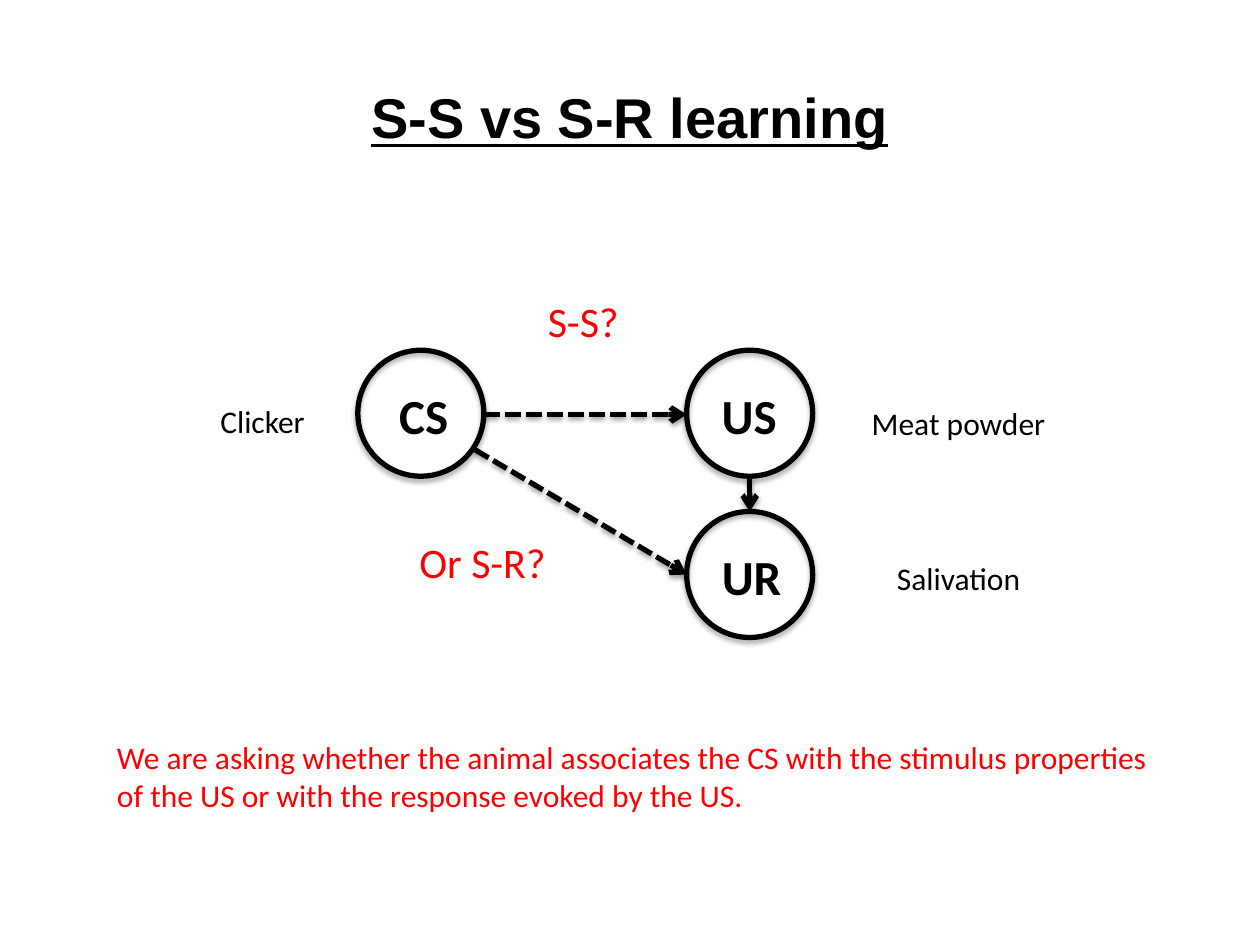
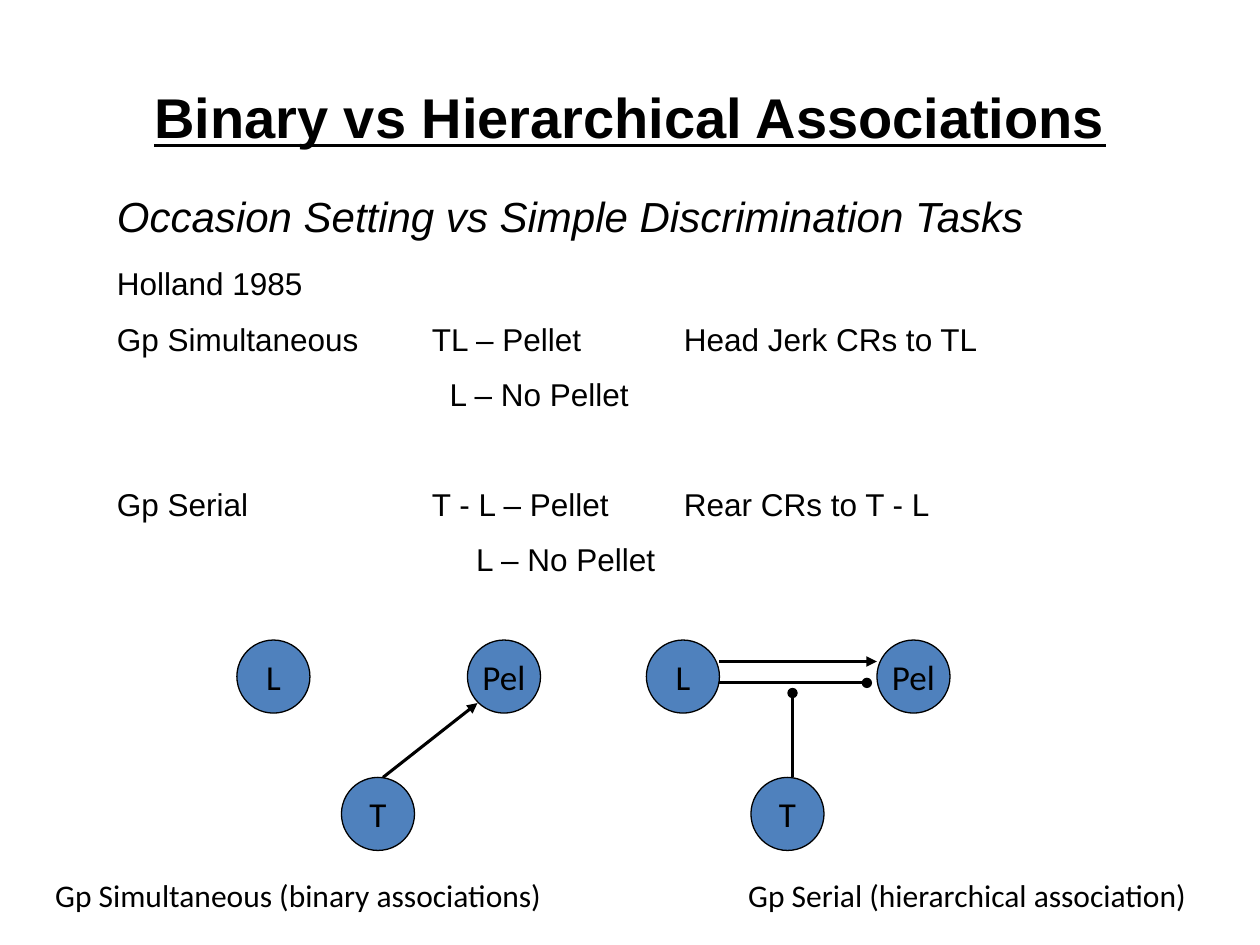
import pptx
import pptx.dml.color
import pptx.enum.dml
import pptx.enum.shapes
import pptx.enum.text
import pptx.oxml
import pptx.oxml.ns
import pptx.util
from dataclasses import dataclass

Inches = pptx.util.Inches
Pt = pptx.util.Pt
qn = pptx.oxml.ns.qn
SHAPE = pptx.enum.shapes.MSO_SHAPE
ALIGN = pptx.enum.text.PP_ALIGN
MIDDLE = pptx.enum.text.MSO_ANCHOR.MIDDLE


@dataclass(frozen=True)
class Theme:
    black: str = "000000"
    red: str = "FF0000"
    blue: str = "4F81BD"
    head: str = "Arial"
    body: str = "Calibri"
    title: int = 32
    node: int = 28
    lead: int = 24
    disc: int = 20
    text: int = 18


THEME = Theme()
RING = 1
DISC = 0.58
RING_SHADE = (35, 1.8)
ARROW_SHADE = (38, 1.6)


def rgb(code):
    return pptx.dml.color.RGBColor.from_string(code)


def style(frame, size, color=THEME.black, font=THEME.body, **marks):
    for par in frame.paragraphs:
        for run in par.runs:
            run.font.size = Pt(size)
            run.font.name = font
            run.font.color.rgb = rgb(color)
            for mark, value in marks.items():
                setattr(run.font, mark, value)


def shade(shape, shadow=None):
    """Set the effects; shadow is (percent opaque, points down), None for none."""
    effects = shape.element.spPr.makeelement(qn("a:effectLst"), {})
    shape.element.spPr.append(effects)
    if shadow:
        alpha, drop = shadow
        outer = pptx.oxml.parse_xml(
            f'<a:outerShdw {pptx.oxml.ns.nsdecls("a")} blurRad="{Pt(3.1)}" '
            f'dist="{Pt(drop)}" dir="5400000" rotWithShape="0">'
            f'<a:srgbClr val="{THEME.black}"><a:alpha val="{alpha * 1000}"/>'
            '</a:srgbClr></a:outerShdw>')
        effects.append(outer)


def add_slide(deck, title):
    slide = deck.slides.add_slide(deck.slide_layouts[5])
    head = slide.shapes.title
    head.left, head.top = Inches(0.5), Inches(0.3)
    head.width, head.height = Inches(9), Inches(1.25)
    frame = head.text_frame
    frame.text = title
    frame.vertical_anchor = MIDDLE
    frame.paragraphs[0].alignment = ALIGN.CENTER
    style(frame, THEME.title, font=THEME.head, bold=True, underline=True)
    return slide


def add_text(slide, text, left, top, width, height, size, wrap=False, **look):
    box = slide.shapes.add_textbox(
        Inches(left), Inches(top), Inches(width), Inches(height))
    frame = box.text_frame
    frame.text = text
    frame.word_wrap = wrap
    frame.auto_size = pptx.enum.text.MSO_AUTO_SIZE.SHAPE_TO_FIT_TEXT
    style(frame, size, **look)
    return frame


def add_circle(slide, left, top, size, weight):
    circle = slide.shapes.add_shape(
        SHAPE.OVAL, Inches(left), Inches(top), Inches(size), Inches(size))
    circle.line.color.rgb = rgb(THEME.black)
    circle.line.width = Pt(weight)
    return circle


def add_ring(slide, name, left, top, shift, width):
    """Draw an open circle and its label, shifted right from its left edge."""
    ring = add_circle(slide, left, top, RING, 3)
    ring.fill.background()
    shade(ring, RING_SHADE)
    add_text(slide, name, left + shift, top + 0.23, width, 0.57,
             THEME.node, bold=True)


def add_disc(slide, name, left, top):
    disc = add_circle(slide, left, top, DISC, 0.75)
    disc.fill.solid()
    disc.fill.fore_color.rgb = rgb(THEME.blue)
    shade(disc)
    frame = disc.text_frame
    frame.text = name
    frame.word_wrap = False
    frame.vertical_anchor = MIDDLE
    frame.paragraphs[0].alignment = ALIGN.CENTER
    style(frame, THEME.disc)


def add_arrow(slide, start, end, weight, tip, dashed=False, shadow=None):
    arrow = slide.shapes.add_connector(
        pptx.enum.shapes.MSO_CONNECTOR.STRAIGHT, *map(Inches, start + end))
    arrow.line.color.rgb = rgb(THEME.black)
    arrow.line.width = Pt(weight)
    if dashed:
        arrow.line.dash_style = pptx.enum.dml.MSO_LINE.SQUARE_DOT
    stroke = arrow.element.spPr.find(qn("a:ln"))
    stroke.append(stroke.makeelement(qn("a:tailEnd"), {"type": tip}))
    shade(arrow, shadow)


def set_tabs(par, stops):
    props = par._p.get_or_add_pPr()
    tabs = props.makeelement(qn("a:tabLst"), {})
    for stop in stops:
        place = {"pos": str(Inches(stop)), "algn": "l"}
        tabs.append(tabs.makeelement(qn("a:tab"), place))
    props.append(tabs)


def draw_learning(deck):
    slide = add_slide(deck, "S-S vs S-R learning")
    for ring in (("CS", 2.84, 2.78, 0.23, 0.6),
                 ("US", 5.45, 2.78, 0.18, 0.64),
                 ("UR", 5.45, 4.06, 0.18, 0.68)):
        add_ring(slide, *ring)
    for start, end, dashed in (((3.84, 3.29), (5.45, 3.29), True),
                               ((3.77, 3.57), (5.45, 4.56), True),
                               ((5.95, 3.78), (5.95, 4.06), False)):
        add_arrow(slide, start, end, 3, "arrow", dashed, ARROW_SHADE)
    for text, left, top, width in (("S-S?", 4.25, 2.3, 0.77),
                                   ("Or S-R?", 3.23, 4.21, 1.21)):
        add_text(slide, text, left, top, width, 0.5, THEME.lead,
                 color=THEME.red)
    for text, left, top, width in (("Clicker", 1.65, 3.14, 0.88),
                                   ("Meat powder", 6.82, 3.16, 1.6),
                                   ("Salivation", 7.02, 4.39, 1.19)):
        add_text(slide, text, left, top, width, 0.4, THEME.text)
    add_text(slide,
             "We are asking whether the animal associates the CS with the "
             "stimulus properties\n"
             "of the US or with the response evoked by the US.",
             0.83, 5.81, 8.49, 0.71, THEME.text, color=THEME.red)


def add_design(slide):
    """List the groups, each line with its space before and tab stops."""
    rows = (
        ("Holland 1985", 0, ()),
        ("Gp Simultaneous\tTL – Pellet\tHead Jerk CRs to TL", 10, (2.5, 4.5)),
        ("\tL – No Pellet", 10, (2.64,)),
        ("Gp Serial\tT - L – Pellet\tRear CRs to T - L", 41, (2.5, 4.5)),
        ("\tL – No Pellet", 10, (2.85,)),
    )
    frame = add_text(slide, "\n".join(row[0] for row in rows),
                     0.83, 2.05, 8.83, 2.66, THEME.text, wrap=True,
                     font=THEME.head)
    for par, (_, space, stops) in zip(frame.paragraphs, rows):
        par.space_before = Pt(space)
        if stops:
            set_tabs(par, stops)


def draw_binary(deck):
    slide = add_slide(deck, "Binary vs Hierarchical Associations")
    add_text(slide, "Occasion Setting vs Simple Discrimination Tasks",
             0.83, 1.46, 7.48, 0.5, THEME.lead, font=THEME.head, italic=True)
    add_design(slide)
    for start, end, weight, tip in (
            ((3.04, 6.17), (3.79, 5.58), 1.75, "triangle"),
            ((5.71, 5.25), (6.96, 5.25), 2, "triangle"),
            ((5.71, 5.42), (6.88, 5.42), 1.75, "oval"),
            ((6.29, 6.17), (6.29, 5.5), 1.75, "oval")):
        add_arrow(slide, start, end, weight, tip)
    for left in (1.88, 5.13):
        add_disc(slide, "L", left, 5.08)
        add_disc(slide, "Pel", left + 1.83, 5.08)
        add_disc(slide, "T", left + 0.83, 6.17)
    frame = add_text(slide, "Gp Simultaneous (binary associations)\t"
                     "Gp Serial (hierarchical association)",
                     0.34, 6.9, 9.57, 0.4, THEME.text, wrap=True)
    set_tabs(frame.paragraphs[0], (5.5,))


def main():
    deck = pptx.Presentation()
    deck.slide_width, deck.slide_height = Inches(10), Inches(7.5)
    draw_learning(deck)
    draw_binary(deck)
    deck.save("out.pptx")


if __name__ == "__main__":
    main()
